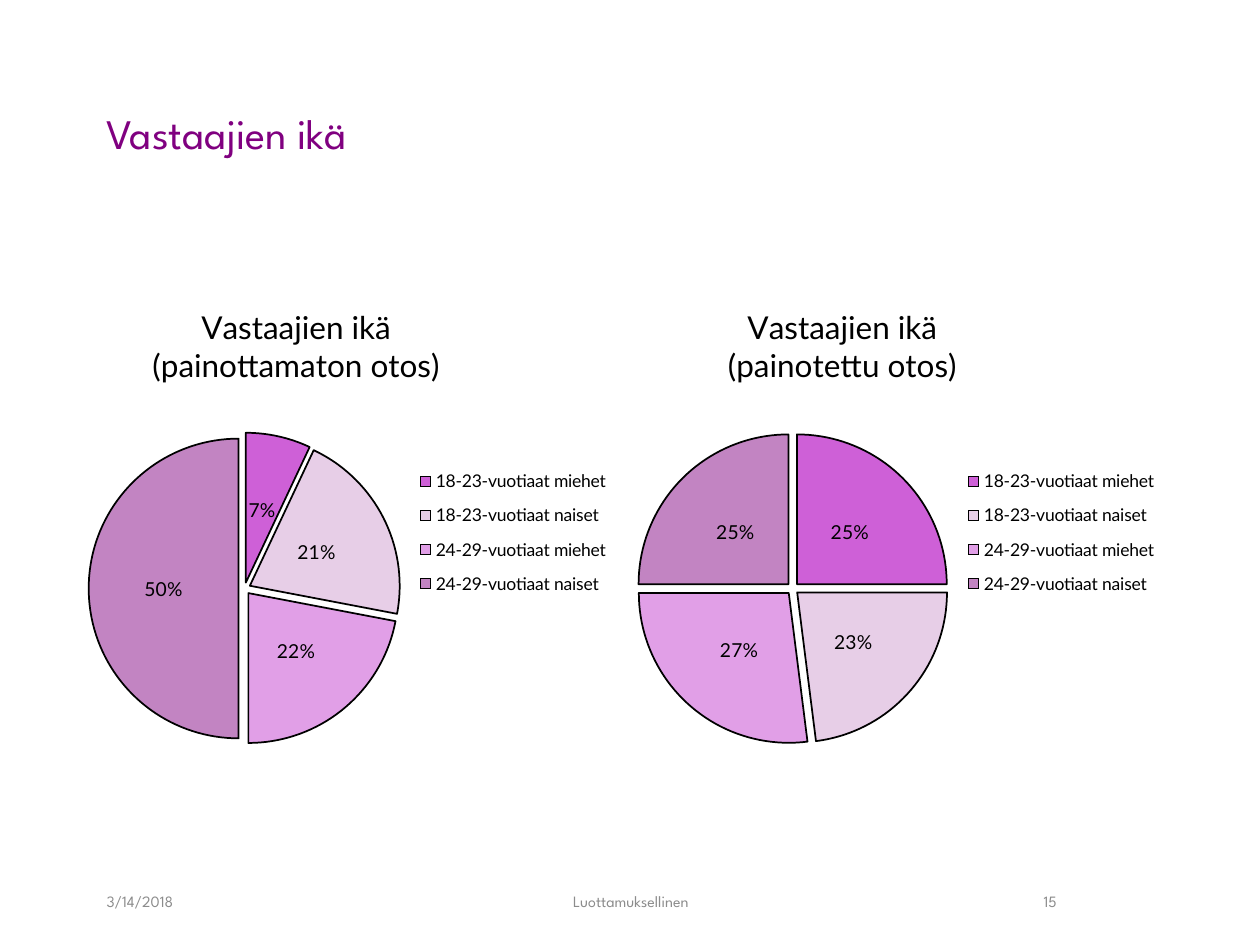
from dataclasses import dataclass

from lxml import etree
from pptx import Presentation
from pptx.chart.data import CategoryChartData
from pptx.dml.color import RGBColor
from pptx.enum.chart import XL_CHART_TYPE, XL_LABEL_POSITION, XL_LEGEND_POSITION
from pptx.enum.text import MSO_ANCHOR, PP_ALIGN
from pptx.oxml.ns import qn
from pptx.util import Cm, Pt

PIE = XL_CHART_TYPE.PIE_EXPLODED
LABEL_CENTER = XL_LABEL_POSITION.CENTER
LEGEND_RIGHT = XL_LEGEND_POSITION.RIGHT
BOTTOM, MIDDLE = MSO_ANCHOR.BOTTOM, MSO_ANCHOR.MIDDLE
LEFT, CENTER = PP_ALIGN.LEFT, PP_ALIGN.CENTER

TEXT_FONT = "League Spartan"
CHART_FONT = "Lato"
PURPLE, GREY, BLACK = "800080", "8C8C8C", "000000"
SLICE_COLORS = ("C239CE", "E1C2E1", "DA88E2", "B366B3")
AGE_GROUPS = (
    "18-23-vuotiaat miehet",
    "18-23-vuotiaat naiset",
    "24-29-vuotiaat miehet",
    "24-29-vuotiaat naiset",
)
FOOTER_TOP, FOOTER_HEIGHT = 17.65, 1.02


@dataclass(frozen=True)
class AgePie:
    """One pie of respondent ages; left edge in centimetres."""

    left: float
    sample: str
    title_x: float
    shares: tuple[float, ...]


AGE_PIES = (
    AgePie(12.5, "(painotettu otos)", 0.19, (0.25, 0.23, 0.27, 0.25)),
    AgePie(1.45, "(painottamaton otos)", 0.14, (0.07, 0.21, 0.22, 0.5)),
)


def rgb(color: str) -> RGBColor:
    """Turn a hex string into a colour."""
    return RGBColor.from_string(color)


def format_font(font, *, name: str, size: float, color: str) -> None:
    """Set typeface, size and colour without bold."""
    font.name = name
    font.size = Pt(size)
    font.bold = False
    font.color.rgb = rgb(color)


def add_text(slide, text: str, *, left: float, top: float, width: float, height: float,
             size: float = 9, color: str = GREY, align=LEFT, anchor=MIDDLE,
             line_spacing: float = 1.0) -> None:
    """Add a wrapped text box, with lengths in centimetres."""
    shape = slide.shapes.add_textbox(Cm(left), Cm(top), Cm(width), Cm(height))
    frame = shape.text_frame
    frame.word_wrap = True
    frame.vertical_anchor = anchor
    paragraph = frame.paragraphs[0]
    paragraph.alignment = align
    paragraph.line_spacing = line_spacing
    run = paragraph.add_run()
    run.text = text
    format_font(run.font, name=TEXT_FONT, size=size, color=color)


def set_layout(element, index: int, **fractions: float) -> None:
    """Place a chart part by fractions of the chart area."""
    for old_layout in element.findall(qn("c:layout")):
        element.remove(old_layout)
    layout = etree.Element(qn("c:layout"))
    manual = etree.SubElement(layout, qn("c:manualLayout"))
    if element.tag == qn("c:plotArea"):
        etree.SubElement(manual, qn("c:layoutTarget")).set("val", "inner")
    for axis in ("x", "y"):
        etree.SubElement(manual, qn(f"c:{axis}Mode")).set("val", "edge")
    for key, value in fractions.items():
        etree.SubElement(manual, qn(f"c:{key}")).set("val", str(value))
    element.insert(index, layout)


def format_slices(series) -> None:
    """Colour, outline and pull apart the slices."""
    series_properties = series.format.line._get_or_add_ln().getparent()
    for old_explosion in series._element.findall(qn("c:explosion")):
        series._element.remove(old_explosion)
    explosion = etree.Element(qn("c:explosion"))
    explosion.set("val", "4")
    series_properties.addnext(explosion)
    for index, color in enumerate(SLICE_COLORS):
        slice_format = series.points[index].format
        slice_format.fill.solid()
        slice_format.fill.fore_color.rgb = rgb(color)
        slice_format.line.color.rgb = rgb(BLACK)
        slice_format.line.width = Pt(1)
    for color_element in series._element.xpath("c:dPt/c:spPr/a:solidFill/a:srgbClr"):
        etree.SubElement(color_element, qn("a:alpha")).set("val", "80000")


def add_chart_title(chart, pie: AgePie) -> None:
    """Write the two-line title of a pie."""
    chart.has_title = True
    frame = chart.chart_title.text_frame
    frame.text = f"Vastaajien ikä\n{pie.sample}"
    for paragraph in frame.paragraphs:
        paragraph.alignment = CENTER
        format_font(paragraph.runs[0].font, name=CHART_FONT, size=18, color=BLACK)
    set_layout(chart.chart_title._element, 1, x=pie.title_x, y=0.13)


def add_age_pie(slide, pie: AgePie) -> None:
    """Add one pie chart with title, labels and legend."""
    data = CategoryChartData(number_format="0%")
    data.categories = AGE_GROUPS
    data.add_series("Vastaajien ikä", pie.shares)
    chart = slide.shapes.add_chart(
        PIE, Cm(pie.left), Cm(4.45), Cm(11.05), Cm(12.57), data
    ).chart
    format_font(chart.font, name=CHART_FONT, size=10, color=BLACK)
    add_chart_title(chart, pie)

    plot = chart.plots[0]
    plot.vary_by_categories = True
    format_slices(plot.series[0])
    plot.has_data_labels = True
    labels = plot.data_labels
    labels.show_value = True
    labels.show_percentage = False
    labels.number_format = "0%"
    labels.number_format_is_linked = False
    labels.position = LABEL_CENTER
    format_font(labels.font, name=CHART_FONT, size=11, color=BLACK)
    set_layout(chart._chartSpace.xpath("c:chart/c:plotArea")[0], 0,
               x=0.03, y=0.34, w=0.57, h=0.5)

    chart.has_legend = True
    chart.legend.position = LEGEND_RIGHT
    chart.legend.include_in_layout = False
    format_font(chart.legend.font, name=CHART_FONT, size=10, color=BLACK)
    set_layout(chart.legend._element, 1, x=0.63, y=0.38, w=0.35, h=0.24)


def main() -> None:
    """Build and save the slide."""
    presentation = Presentation()
    presentation.slide_width = Cm(25.4)
    presentation.slide_height = Cm(19.05)
    slide = presentation.slides.add_slide(presentation.slide_layouts[6])
    add_text(slide, "Vastaajien ikä", left=1.9, top=0.58, width=22.23, height=2.74,
             size=24, color=PURPLE, anchor=BOTTOM, line_spacing=0.9)
    for text, left, width, align in (
        ("3/14/2018", 1.9, 5.31, LEFT),
        ("Luottamuksellinen", 8.69, 8.05, CENTER),
        ("15", 18.21, 5.92, CENTER),
    ):
        add_text(slide, text, left=left, top=FOOTER_TOP, width=width,
                 height=FOOTER_HEIGHT, align=align)
    for pie in AGE_PIES:
        add_age_pie(slide, pie)
    presentation.save("out.pptx")


if __name__ == "__main__":
    main()
